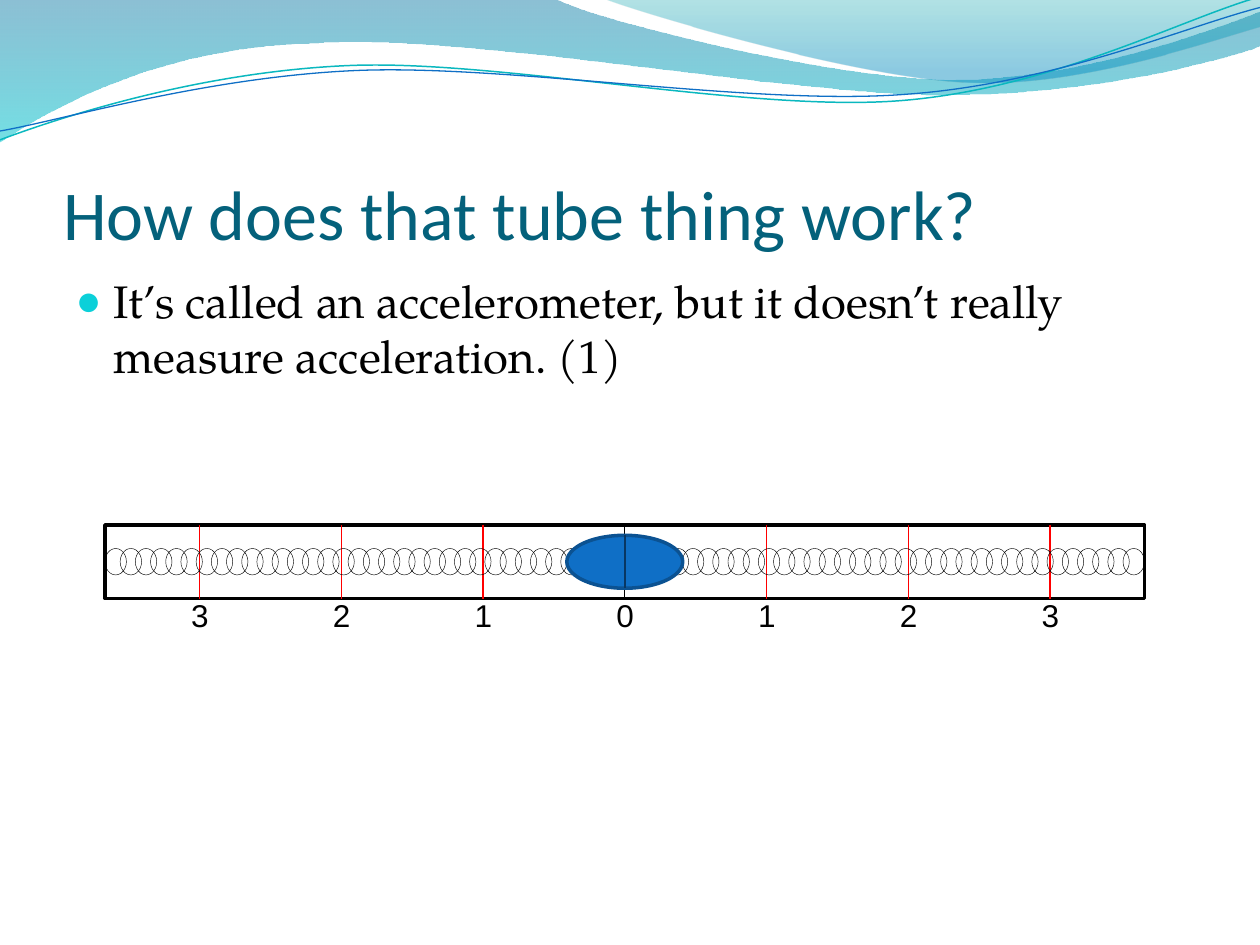
from math import cos, radians, sin

from lxml import etree
from pptx import Presentation
from pptx.dml.color import RGBColor
from pptx.enum.shapes import MSO_CONNECTOR as Conn, MSO_SHAPE as Kind
from pptx.enum.text import MSO_ANCHOR as Anchor, MSO_AUTO_SIZE as Fit, PP_ALIGN as Align
from pptx.oxml import parse_xml
from pptx.oxml.ns import nsdecls, qn
from pptx.util import Inches, Pt

HEX = {
    "title": "04617B", "text": "000000", "bullet": "0BD0D9", "ink": "000000",
    "tick": "FF0000", "float": "0F6FC6", "rim": "0B5292", "mark": "083763",
    "teal": "0AB8BF", "blue": "0F6FC6",
}
TILT = 2.7
# Each wave starts at a point; a pair adds a line, a triple of pairs adds a curve.
BANDS = [
    ([(0, 0), (4.4, -0.01),
      ((4.76, 0.17), (6.64, 0.63), (7.58, 0.63)),
      ((8.53, 0.63), (9.58, 0.26), (10, 0.09)), (10.01, 0.36),
      ((9.83, 0.44), (8.7, 0.76), (7.46, 0.75)),
      ((6.22, 0.75), (3.82, 0.28), (2.57, 0.34)),
      ((1.29, 0.36), (0.46, 0.83), (-0.01, 1.13)), (0, 0)],
     [(0, "0074A1", 45), (100, "00C6CF", 55)]),
    ([(4.79, -0.01),
      ((5.09, 0.11), (6.82, 0.62), (7.69, 0.65)),
      ((8.56, 0.69), (9.61, 0.32), (10, 0.21)), (10, 0), (4.79, -0.01)],
     [(0, "00A1A9", 30), (80, "008BBF", 45)]),
]
STRANDS = [
    ([(0, 1.11),
      ((0.48, 0.93), (1.58, 0.57), (2.77, 0.52)),
      ((3.95, 0.47), (5.93, 0.89), (7.13, 0.8)),
      ((8.33, 0.71), (9.38, 0.15), (9.98, -0.02))], (4.99, 0.58), "teal", 0.85),
    ([(0, 1.04),
      ((0.47, 0.96), (1.64, 0.61), (2.83, 0.56)),
      ((4.03, 0.51), (5.97, 0.84), (7.17, 0.75)),
      ((8.36, 0.67), (9.41, 0.21), (10, 0.06))], (5, 0.59), "blue", 0.75),
]


def color(name):
    return RGBColor.from_string(HEX[name])


def turn(point, hub):
    """Turn a point clockwise by the tilt around the hub."""
    x, y = point[0] - hub[0], point[1] - hub[1]
    c, s = cos(radians(TILT)), sin(radians(TILT))
    return hub[0] + x * c - y * s, hub[1] + x * s + y * c


def add_path(shapes, steps, close, hub=None):
    """Draw lines and curves; with a hub, the shape is tilted around it."""
    pts, curves = [steps[0]], []
    for step in steps[1:]:
        if isinstance(step[0], tuple):
            curves.append(len(pts) - 1)
            pts.extend(step)
        else:
            pts.append(step)
    if hub:
        pts = [turn(p, hub) for p in pts]
    pts = [(Inches(x), Inches(y)) for x, y in pts]
    pen = shapes.build_freeform(*pts[0])
    pen.add_line_segments(pts[1:], close=close)
    shape = pen.convert_to_shape()
    shape.shadow.inherit = False
    if hub:
        shape.rotation = 360 - TILT
    lines = list(shape._element.iter(qn("a:lnTo")))
    for i in curves:
        curve = etree.Element(qn("a:cubicBezTo"))
        lines[i].addprevious(curve)
        for line in lines[i:i + 3]:
            curve.append(line[0])
            line.getparent().remove(line)
    return shape


def blend(shape, stops):
    """Fill from top to bottom through stops of position, colour and opacity."""
    shape.fill.background()
    marks = "".join(
        f'<a:gs pos="{pos * 1000}"><a:srgbClr val="{tone}">'
        f'<a:alpha val="{alpha * 1000}"/></a:srgbClr></a:gs>'
        for pos, tone, alpha in stops)
    grad = parse_xml(f'<a:gradFill {nsdecls("a")}><a:gsLst>{marks}</a:gsLst>'
                     '<a:lin ang="5400000" scaled="0"/></a:gradFill>')
    props = shape._element.spPr
    props.replace(props.find(qn("a:noFill")), grad)


def add_waves(slide):
    waves = []
    for steps, stops in BANDS:
        band = add_path(slide.shapes, steps, True)
        band.line.fill.background()
        blend(band, stops)
        waves.append(band)
    group = slide.shapes.add_group_shape()
    for steps, hub, tone, width in STRANDS:
        strand = add_path(group.shapes, steps, False, hub)
        strand.fill.background()
        strand.line.color.rgb = color(tone)
        strand.line.width = Pt(width)
    for i, wave in enumerate([*waves, group]):
        slide.shapes._spTree.insert(2 + i, wave._element)


def place(holder, box, text, font, size, tone):
    holder.left, holder.top, holder.width, holder.height = map(Inches, box)
    frame = holder.text_frame
    frame.text = text
    frame.auto_size = Fit.NONE
    para = frame.paragraphs[0]
    para.alignment = Align.LEFT
    face = para.runs[0].font
    face.name, face.size, face.color.rgb = font, Pt(size), color(tone)
    return frame


def add_title(slide, box, text):
    frame = place(slide.shapes.title, box, text, "Calibri", 40, "title")
    frame.vertical_anchor = Anchor.BOTTOM
    frame.margin_left = frame.margin_right = frame.margin_bottom = 0
    frame.margin_top = Inches(0.05)


def add_body(slide, box, text):
    frame = place(slide.placeholders[1], box, text, "TeX Gyre Pagella", 26, "text")
    para = frame.paragraphs[0]
    para.space_before = Pt(5.2)
    props = para._p.get_or_add_pPr()
    props.set("marL", str(Inches(0.3)))
    props.set("indent", str(-Inches(0.3)))
    tint = etree.SubElement(props, qn("a:buClr"))
    etree.SubElement(tint, qn("a:srgbClr")).set("val", HEX["bullet"])
    etree.SubElement(props, qn("a:buSzPct")).set("val", "95000")
    etree.SubElement(props, qn("a:buChar")).set("char", "●")


def add_part(group, kind, box, tone, width, fill=None):
    part = group.shapes.add_shape(kind, *map(Inches, box))
    part.shadow.inherit = False
    if fill:
        part.fill.solid()
        part.fill.fore_color.rgb = color(fill)
    else:
        part.fill.background()
    part.line.color.rgb = color(tone)
    part.line.width = Pt(width)
    return part


def add_line(group, x, top, end, tone, width):
    line = group.shapes.add_connector(
        Conn.STRAIGHT, Inches(x), Inches(top), Inches(x), Inches(end))
    line.line.color.rgb = color(tone)
    line.line.width = Pt(width)
    etree.SubElement(line._element.spPr, qn("a:effectLst"))
    return line


def add_label(group, x, top, text):
    wide = 0.33
    box = group.shapes.add_textbox(*map(Inches, (x - wide / 2, top, wide, 0.4)))
    frame = box.text_frame
    frame.text = text
    frame.word_wrap = True
    frame.auto_size = Fit.SHAPE_TO_FIT_TEXT
    font = frame.paragraphs[0].runs[0].font
    font.name, font.size, font.color.rgb = "Arial", Pt(18), color("text")


def add_gauge(slide, box, reach=3, gap=1.125, rings=68):
    """Draw the tube with its scale, spring and float."""
    left, top, width, height = box
    mid, base = left + width / 2, top + height
    group = slide.shapes.add_group_shape()
    tube = add_part(group, Kind.RECTANGLE, box, "ink", 2)
    for n in range(-reach, reach + 1):
        line = add_line(group, mid + n * gap, top, base, "tick" if n else "ink", 0.75)
        if n == 0:
            line.begin_connect(tube, 0)
            line.end_connect(tube, 2)

    wide, high = 0.17, 0.21
    step = (width - wide) / (rings - 1)
    for i in range(rings):
        ring = (left + i * step, top + (height - high) / 2, wide, high)
        add_part(group, Kind.OVAL, ring, "ink", 0.25)

    wide, high = 0.92, 0.42
    rise = top + (height - high) / 2
    add_part(group, Kind.OVAL, (mid - wide / 2, rise, wide, high), "rim", 2, "float")
    add_line(group, mid, rise, rise + high, "mark", 1)
    for n in range(-reach, reach + 1):
        add_label(group, mid + n * gap, base - 0.07, str(abs(n)))


def main():
    deck = Presentation()
    deck.slide_width, deck.slide_height = Inches(10), Inches(7.5)
    slide = deck.slides.add_slide(deck.slide_layouts[1])
    add_waves(slide)
    add_title(slide, (0.5, 0.77, 9, 1.25), "How does that tube thing work?")
    add_body(slide, (0.5, 2.12, 9, 4.8),
             "It’s called an accelerometer, but it doesn’t really measure acceleration. (1)")
    add_gauge(slide, (5 / 6, 25 / 6, 8.25, 7 / 12))
    deck.save("out.pptx")


if __name__ == "__main__":
    main()
